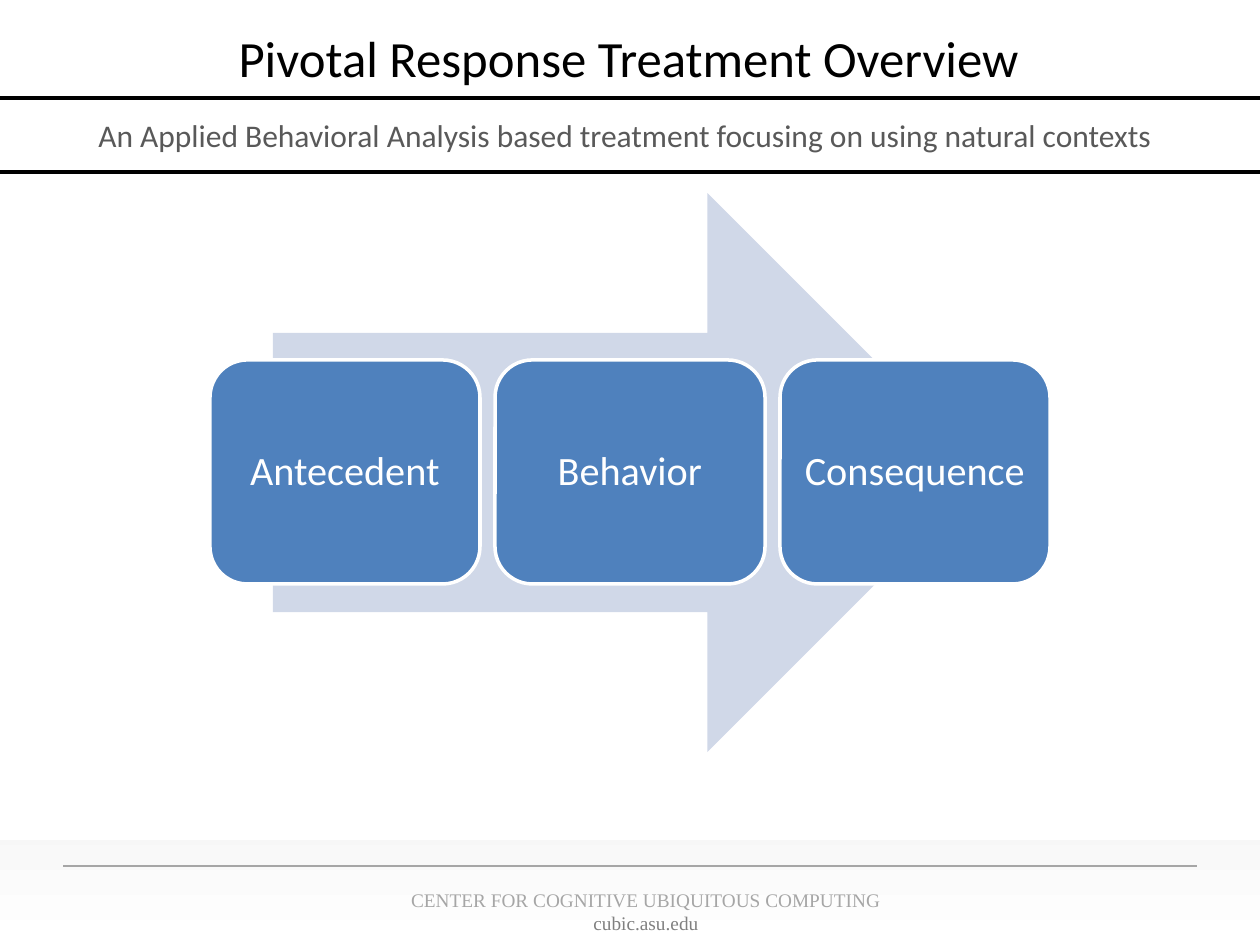
"""Build the Pivotal Response Treatment overview slide."""
from copy import deepcopy

from lxml.etree import SubElement
from pptx import Presentation
from pptx.dml.color import RGBColor
from pptx.enum.shapes import MSO_CONNECTOR, MSO_SHAPE
from pptx.enum.text import MSO_ANCHOR, PP_ALIGN
from pptx.oxml.ns import qn
from pptx.util import Pt

PX = 914400 / 126
THEME = {
    "white": "FFFFFF", "black": "000000", "subtitle": "595959",
    "footer": "A6A6A6", "address": "808080", "arrow": "D0D8E8", "box": "4F81BD",
    "gradient": ("BFBFBF", "D9D9D9", "FFFFFF"),
    "sans": "Calibri", "serif": "Times New Roman",
    "title_size": 29, "subtitle_size": 18, "box_size": 23, "footer_size": 11,
}


def add_block(kind, bounds, fill):
    shape = slide.shapes.add_shape(kind, *[round(value * PX) for value in bounds])
    shape.shadow.inherit = False
    shape.fill.solid()
    shape.fill.fore_color.rgb = RGBColor.from_string(THEME[fill])
    shape.line.fill.background()
    return shape


def write(paragraph, text, font, size, color, alignment=PP_ALIGN.CENTER):
    paragraph.text = text
    paragraph.alignment = alignment
    values = {"name": THEME[font], "size": Pt(THEME[size])}
    for name, value in values.items():
        setattr(paragraph.font, name, value)
    paragraph.font.color.rgb = RGBColor.from_string(THEME[color])


presentation = Presentation()
presentation.slide_width = round(1260 * PX)
presentation.slide_height = round(945 * PX)
slide = presentation.slides.add_slide(presentation.slide_layouts[6])

backdrop = add_block(MSO_SHAPE.RECTANGLE, (0, 0, 1260, 945), "white")
backdrop.fill.gradient()
backdrop.fill.gradient_angle = 270
stop_list = backdrop.element.spPr.find(qn("a:gradFill")).find(qn("a:gsLst"))
stop_list.append(deepcopy(stop_list[-1]))
for stop, color, position in zip(backdrop.fill.gradient_stops, THEME["gradient"], (0, 0.5, 1)):
    stop.color.rgb = RGBColor.from_string(color)
    stop.position = position

add_block(MSO_SHAPE.RECTANGLE, (0, 0, 1260, 840), "white")

rules = [
    (63, 1197, 866, "footer", 0.75),
    (0, 1260, 98, "black", 1.75),
    (0, 1260, 172, "black", 1.75),
]
for left, right, top, color, weight in rules:
    ends = [round(value * PX) for value in (left, top, right, top)]
    rule = slide.shapes.add_connector(MSO_CONNECTOR.STRAIGHT, *ends)
    rule.line.color.rgb = RGBColor.from_string(THEME[color])
    rule.line.width = Pt(weight)
    SubElement(rule.element.spPr, qn("a:effectLst"))

texts = [
    ((62, 21, 1134, 120), PP_ALIGN.CENTER,
     [("Pivotal Response Treatment Overview", "sans", "title_size", "black")]),
    ((86, 110, 1174, 50), PP_ALIGN.LEFT,
     [("An Applied Behavioral Analysis based treatment focusing on using natural contexts",
       "sans", "subtitle_size", "subtitle")]),
    ((273, 882, 746, 59), PP_ALIGN.CENTER,
     [("CENTER FOR COGNITIVE UBIQUITOUS COMPUTING", "serif", "footer_size", "footer"),
      ("cubic.asu.edu", "serif", "footer_size", "address")]),
]
for bounds, alignment, lines in texts:
    frame = slide.shapes.add_textbox(*[round(value * PX) for value in bounds]).text_frame
    frame.word_wrap = True
    for index, line in enumerate(lines):
        paragraph = frame.add_paragraph() if index else frame.paragraphs[0]
        write(paragraph, *line, alignment)

add_block(MSO_SHAPE.RIGHT_ARROW, (273, 193, 714, 559), "arrow")

for index, label in enumerate(("Antecedent", "Behavior", "Consequence")):
    box = add_block(MSO_SHAPE.ROUNDED_RECTANGLE, (210 + index * 285, 360, 270, 224), "box")
    box.line.color.rgb = RGBColor.from_string(THEME["white"])
    box.line.width = Pt(2)
    frame_values = {"margin_left": 0, "margin_right": 0, "word_wrap": True,
                    "vertical_anchor": MSO_ANCHOR.MIDDLE}
    for name, value in frame_values.items():
        setattr(box.text_frame, name, value)
    paragraph = box.text_frame.paragraphs[0]
    paragraph.line_spacing = 0.9
    write(paragraph, label, "sans", "box_size", "white")

presentation.save("out.pptx")
